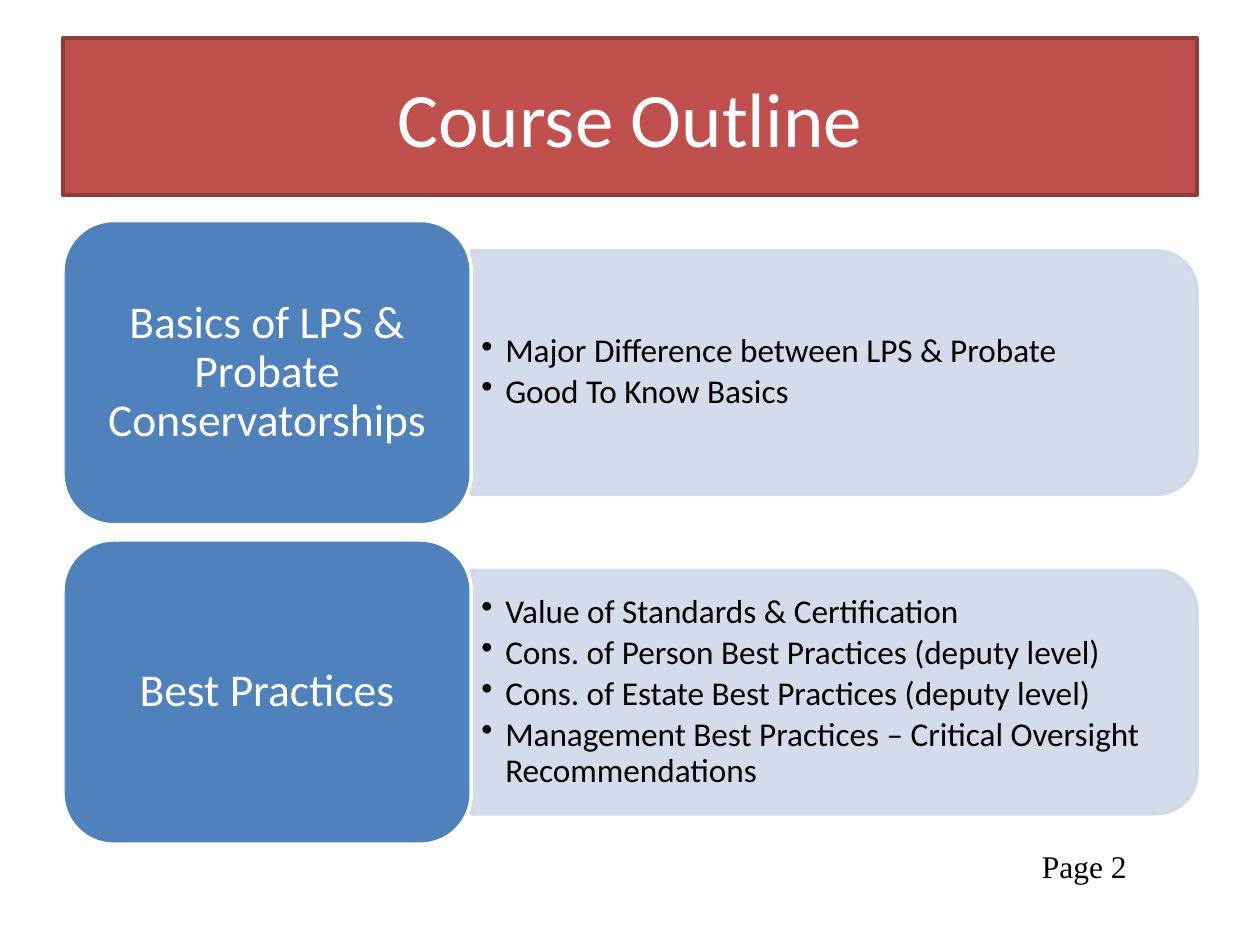
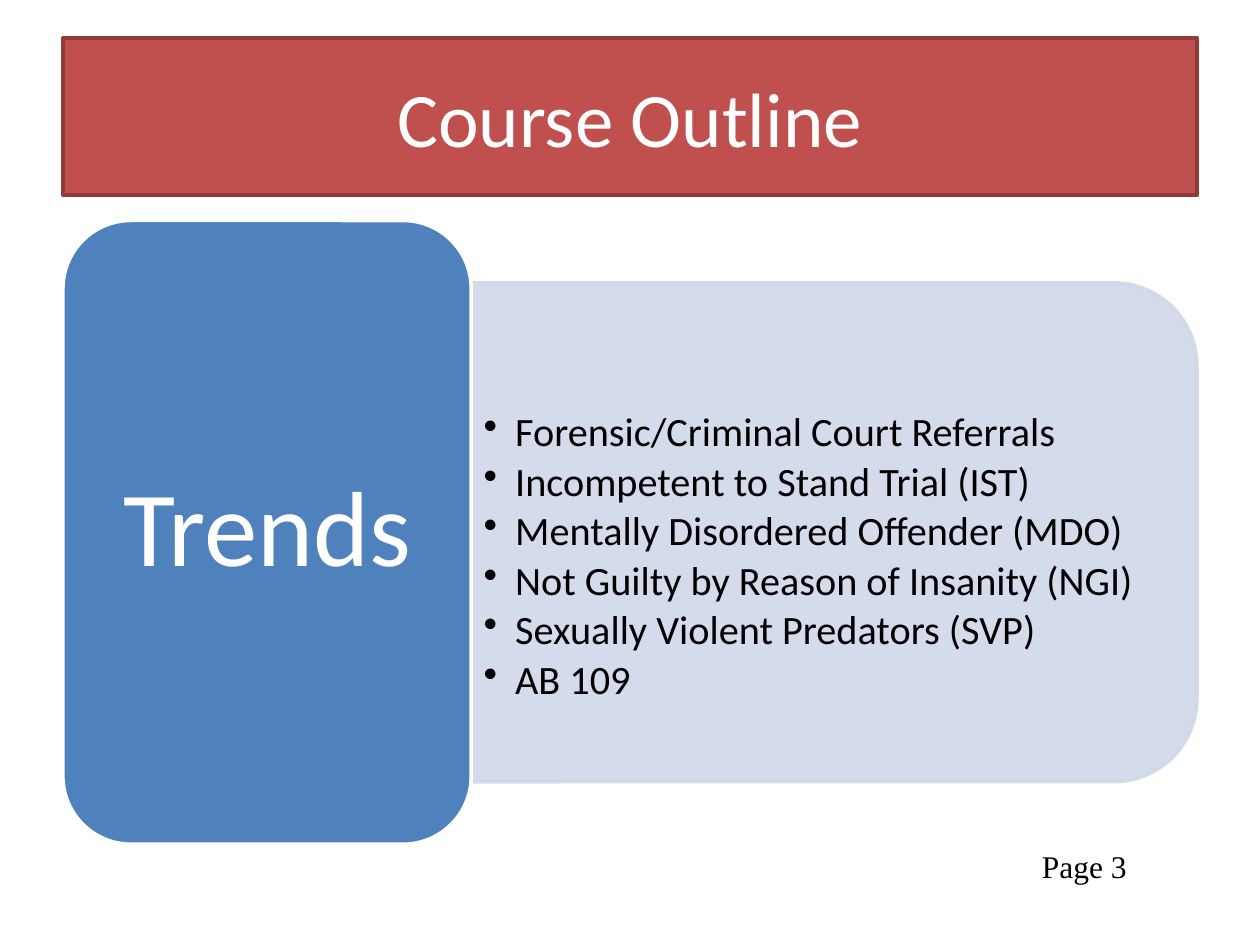
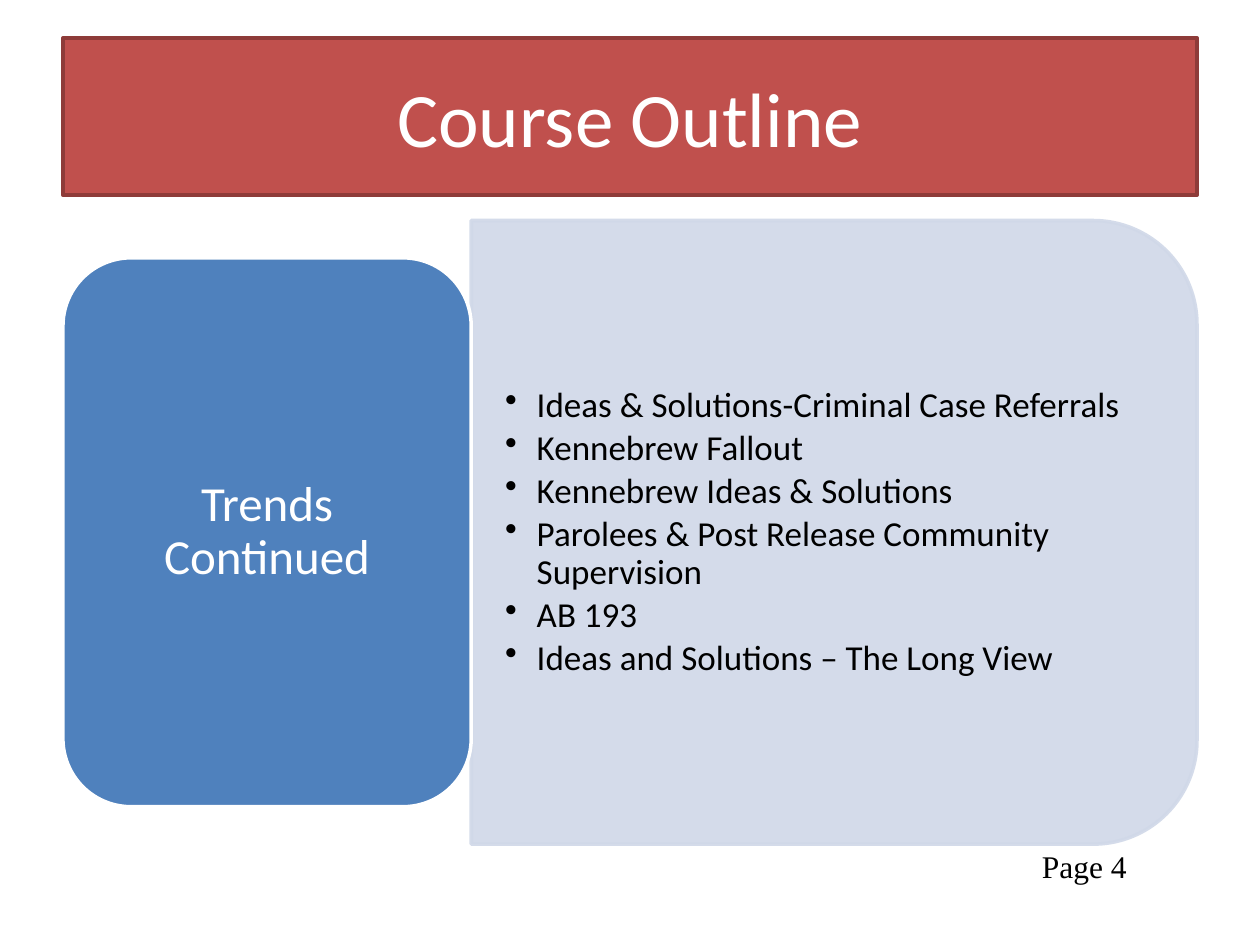
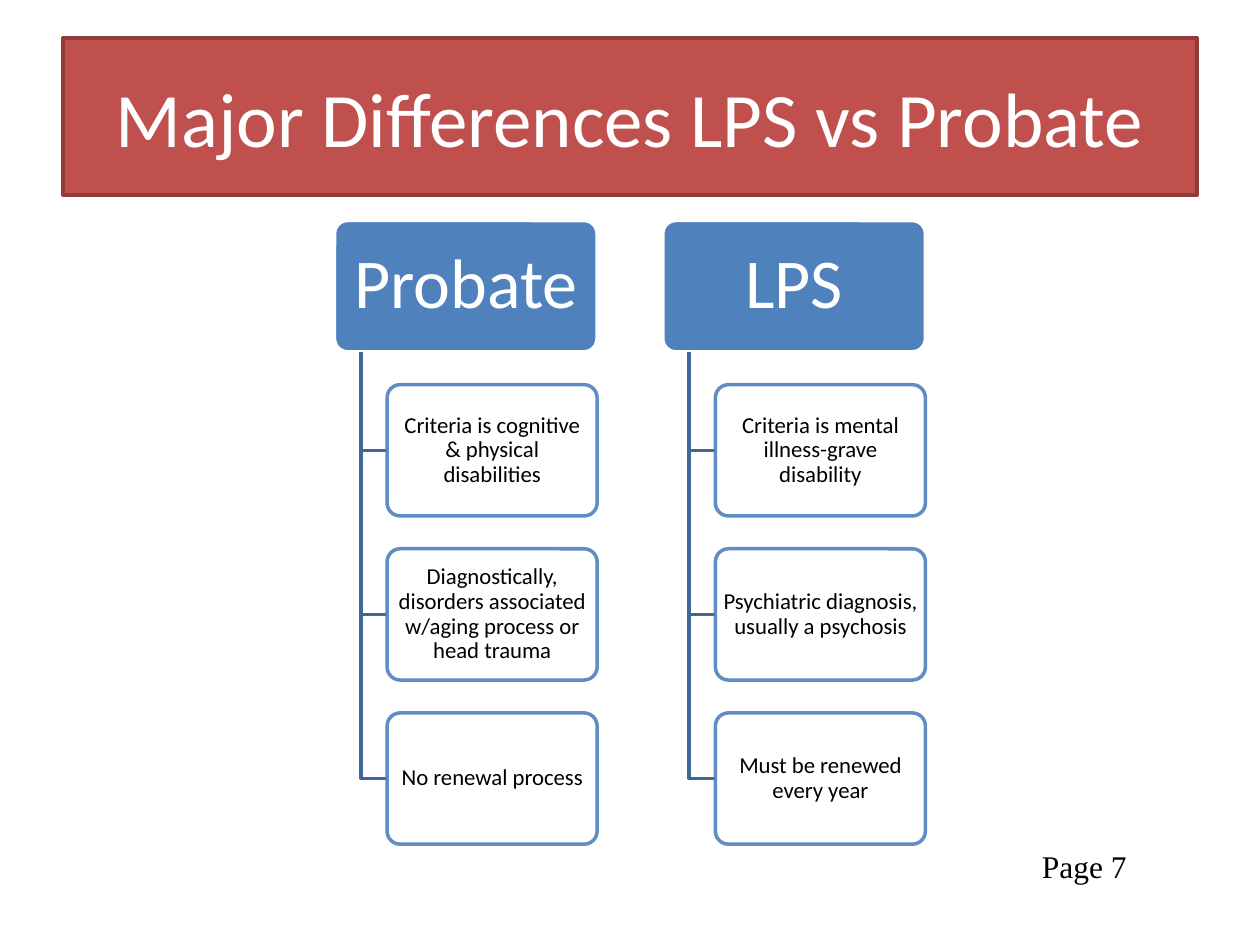
from lxml.etree import SubElement
from pptx import Presentation
from pptx.dml.color import RGBColor
from pptx.enum.shapes import MSO_SHAPE as Preset
from pptx.enum.text import MSO_ANCHOR as Anchor, PP_ALIGN as Align
from pptx.oxml.ns import qn
from pptx.util import Inches, Pt

COLORS = {
    "band": "C0504D",
    "band_edge": "8E3B39",
    "node": "4F81BD",
    "panel": "D0D8E8",
    "stem": "3F6797",
    "white": "FFFFFF",
    "black": "000000",
}
WIDTH, HEIGHT = 10, 7.5
LEFT, SPAN = 0.05 * WIDTH, 0.9 * WIDTH
TOP, DEPTH = 1.75, 0.66 * HEIGHT
ROUND = 1 / 6
CORNER_INSET = 0.293

presentation = Presentation()
presentation.slide_width = Inches(WIDTH)
presentation.slide_height = Inches(HEIGHT)


def add_box(slide, box, preset=None, fill=None, line=None, corner=None, opacity=100):
    frame = [Inches(length) for length in box]
    if preset is None:
        return slide.shapes.add_textbox(*frame)
    shape = slide.shapes.add_shape(preset, *frame)
    shape.shadow.inherit = False
    shape.fill.solid()
    shape.fill.fore_color.rgb = RGBColor.from_string(COLORS[fill])
    shape.line.color.rgb = RGBColor.from_string(COLORS[line])
    shape.line.width = Pt(2)
    if corner:
        shape.adjustments[0] = corner
    if opacity < 100:
        for color in shape.element.spPr.iter(qn("a:srgbClr")):
            SubElement(color, qn("a:alpha")).set("val", str(opacity * 1000))
    return shape


def write_text(shape, lines, size, color="white", font="Calibri", align=Align.CENTER,
               inset=(0.1, 0.05), spacing=0.9, after=0.35, hang=0, top_extra=0):
    frame = shape.text_frame
    frame.word_wrap = True
    frame.vertical_anchor = Anchor.MIDDLE
    frame.margin_left = frame.margin_right = Inches(inset[0])
    frame.margin_top = Inches(inset[1] + top_extra)
    frame.margin_bottom = Inches(inset[1])
    for index, line in enumerate(lines):
        paragraph = frame.paragraphs[0] if index == 0 else frame.add_paragraph()
        paragraph.alignment = align
        paragraph.line_spacing = spacing
        paragraph.space_after = Pt(after * size)
        if hang:
            paragraph.level = 1
            properties = paragraph._p.get_or_add_pPr()
            properties.set("marL", str(Inches(hang)))
            properties.set("indent", str(-Inches(hang)))
            SubElement(properties, qn("a:buChar")).set("char", "•")
        run = paragraph.add_run()
        run.text = line
        run.font.name = font
        run.font.size = Pt(size)
        run.font.color.rgb = RGBColor.from_string(COLORS[color])


slides = []
for title, page in [("Course Outline", 2), ("Course Outline", 3), ("Course Outline", 4),
                    ("Major Differences LPS vs Probate", 7)]:
    slide = presentation.slides.add_slide(presentation.slide_layouts[6])
    band = add_box(slide, (LEFT, 0.04 * HEIGHT, SPAN, HEIGHT / 6),
                   Preset.RECTANGLE, "band", "band_edge")
    write_text(band, [title], 44, spacing=1, after=0)
    footer = add_box(slide, (8.17, 6.67, 1.08, 0.4))
    write_text(footer, [f"Page {page}"], 18, "black", "Times New Roman", Align.LEFT,
               spacing=1, after=0)
    slides.append(slide)

outlines = [
    {"node_share": 1, "panel_share": 0.8, "node_size": 26, "node_inset": (0.11, 0.05),
     "size": 19, "inset": (0.08, 0.04), "hang": 0.19, "top_extra": 0,
     "topics": [
         ("Basics of LPS & Probate Conservatorships",
          ["Major Difference between LPS & Probate", "Good To Know Basics"]),
         ("Best Practices",
          ["Value of Standards & Certification",
           "Cons. of Person Best Practices (deputy level)",
           "Cons. of Estate Best Practices (deputy level)",
           "Management Best Practices – Critical Oversight Recommendations"]),
     ]},
    {"node_share": 1, "panel_share": 0.8, "node_size": 61, "node_inset": (0.25, 0.13),
     "size": 23, "inset": (0.1, 0.05), "hang": 0.25, "top_extra": 0.4,
     "topics": [
         ("Trends",
          ["Forensic/Criminal Court Referrals",
           "Incompetent to Stand Trial (IST)",
           "Mentally Disordered Offender (MDO)",
           "Not Guilty by Reason of Insanity (NGI)",
           "Sexually Violent Predators (SVP)",
           "AB 109"]),
     ]},
    {"node_share": 0.88, "panel_share": 1, "node_size": 28, "node_inset": (0.12, 0.06),
     "size": 20, "inset": (0.27, 0.14), "hang": 0.25, "top_extra": 0,
     "topics": [
         ("Trends Continued",
          ["Ideas & Solutions-Criminal Case Referrals",
           "Kennebrew Fallout",
           "Kennebrew Ideas & Solutions",
           "Parolees & Post Release Community Supervision",
           "AB 193",
           "Ideas and Solutions – The Long View"]),
     ]},
]
node_width, panel_width = 0.36 * SPAN, 0.64 * SPAN
panel_left = LEFT + node_width

for slide, outline in zip(slides, outlines):
    count = len(outline["topics"])
    row_height = DEPTH / (count + 0.05 * (count - 1))
    node_height = outline["node_share"] * row_height
    panel_height = outline["panel_share"] * row_height
    for row, (heading, points) in enumerate(outline["topics"]):
        middle = TOP + 1.05 * row * row_height + row_height / 2

        panel = add_box(slide, (panel_left + (panel_width - panel_height) / 2,
                                middle - panel_width / 2, panel_height, panel_width),
                        Preset.ROUND_2_SAME_RECTANGLE, "panel", "panel", ROUND, 90)
        panel.rotation = 90
        trim = CORNER_INSET * ROUND * panel_height
        points_box = add_box(slide, (panel_left, middle - panel_height / 2 + trim,
                                     panel_width - trim, panel_height - 2 * trim))
        write_text(points_box, points, outline["size"], "black", align=Align.LEFT,
                   inset=outline["inset"], after=0.15, hang=outline["hang"],
                   top_extra=outline["top_extra"])

        node_top = middle - node_height / 2
        add_box(slide, (LEFT, node_top, node_width, node_height),
                Preset.ROUNDED_RECTANGLE, "node", "white", ROUND)
        trim = CORNER_INSET * ROUND * min(node_width, node_height)
        heading_box = add_box(slide, (LEFT + trim, node_top + trim,
                                      node_width - 2 * trim, node_height - 2 * trim))
        write_text(heading_box, [heading], outline["node_size"], inset=outline["node_inset"])

comparison = [
    ("Probate",
     ["Criteria is cognitive & physical disabilities",
      "Diagnostically, disorders associated w/aging process or head trauma",
      "No renewal process"]),
    ("LPS",
     ["Criteria is mental illness-grave disability",
      "Psychiatric diagnosis, usually a psychosis",
      "Must be renewed every year"]),
]
slide = slides[3]
cell_height = DEPTH / 4.75
head_width = 2 * cell_height
row_pitch, column_pitch = 1.25 * cell_height, 1.25 * head_width
first_left = (WIDTH - column_pitch - head_width) / 2
trim = CORNER_INSET * 0.1 * cell_height

for column, (heading, criteria) in enumerate(comparison):
    head_left = first_left + column * column_pitch
    stem_x = head_left + 0.1 * head_width
    stem_top = TOP + cell_height
    for row, label in enumerate([heading] + criteria):
        is_head = row == 0
        left = head_left if is_head else head_left + 0.2 * head_width
        width = head_width if is_head else 0.8 * head_width
        top = TOP + row * row_pitch
        if not is_head:
            elbow_y = top + cell_height / 2
            builder = slide.shapes.build_freeform(Inches(stem_x), Inches(stem_top))
            builder.add_line_segments([(Inches(stem_x), Inches(elbow_y)),
                                       (Inches(left), Inches(elbow_y))], close=False)
            stem = builder.convert_to_shape()
            stem.shadow.inherit = False
            stem.fill.background()
            stem.line.color.rgb = RGBColor.from_string(COLORS["stem"])
            stem.line.width = Pt(2)
        add_box(slide, (left, top, width, cell_height), Preset.ROUNDED_RECTANGLE,
                "node" if is_head else "white", "white" if is_head else "node",
                0.1, 100 if is_head else 90)
        label_box = add_box(slide, (left + trim, top + trim,
                                    width - 2 * trim, cell_height - 2 * trim))
        write_text(label_box, [label], 40 if is_head else 13,
                   "white" if is_head else "black",
                   inset=(0.08, 0.06) if is_head else (0.03, 0.02))

presentation.save("out.pptx")
